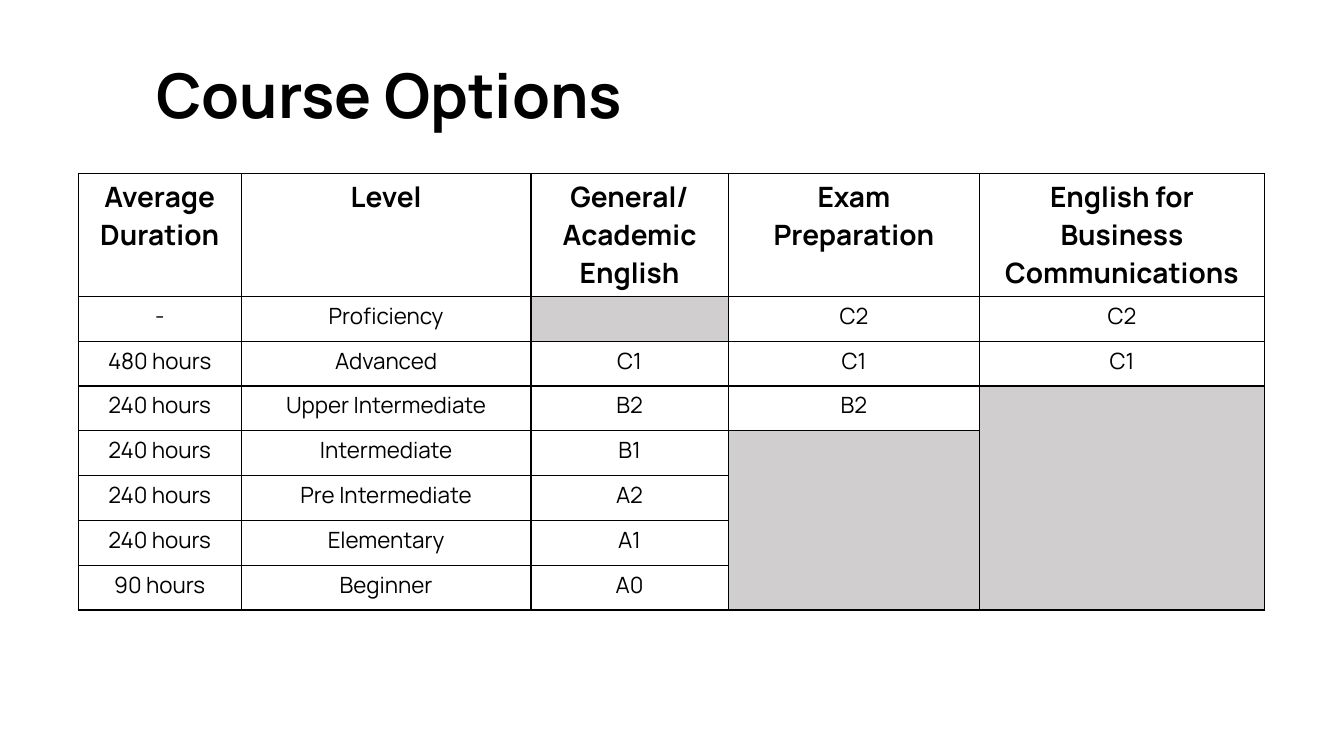
from dataclasses import dataclass

from lxml.etree import SubElement
from pptx import Presentation
from pptx.dml.color import RGBColor
from pptx.enum.text import MSO_ANCHOR as Anchor, MSO_AUTO_SIZE as AutoSize, PP_ALIGN as Align
from pptx.oxml.ns import qn
from pptx.util import Cm, Pt

FONT = "Manrope"
BLACK = "000000"
GREY = "D0CECE"
HEADER_HEIGHT, LEVEL_HEIGHT = 3.1, 1.13


@dataclass
class Course:
    heading: tuple[str, ...]
    width: float
    entries: tuple[str, ...]


@dataclass
class Unavailable:
    column: int
    first_row: int
    last_row: int


COURSES = [
    Course(("Average Duration",), 4.11,
           ("-", "480 hours", "240 hours", "240 hours", "240 hours", "240 hours", "90 hours")),
    Course(("Level",), 7.3,
           ("Proficiency", "Advanced", "Upper Intermediate", "Intermediate",
            "Pre Intermediate", "Elementary", "Beginner")),
    Course(("General/", "Academic English"), 4.97, ("", "C1", "B2", "B1", "A2", "A1", "A0")),
    Course(("Exam", "Preparation"), 6.34, ("C2", "C1", "B2")),
    Course(("English for Business Communications",), 7.17, ("C2", "C1")),
]
UNAVAILABLE = [Unavailable(2, 1, 1), Unavailable(3, 4, 7), Unavailable(4, 3, 7)]


def color(value: str) -> RGBColor:
    return RGBColor.from_string(value)


def add_run(paragraph, text: str, size: float, bold: bool) -> None:
    run = paragraph.add_run()
    run.text = text
    run.font.name = FONT
    run.font.size = Pt(size)
    run.font.bold = bold
    run.font.color.rgb = color(BLACK)


def write_cell(cell, lines: tuple[str, ...], size: float, bold: bool) -> None:
    frame = cell.text_frame
    for index, line in enumerate(lines):
        paragraph = frame.add_paragraph() if index else frame.paragraphs[0]
        paragraph.alignment = Align.CENTER
        add_run(paragraph, line, size, bold)


def style_cell(cell) -> None:
    cell.margin_left = cell.margin_right = Cm(0.2)
    cell.margin_top = cell.margin_bottom = Cm(0.1)
    properties = cell._tc.get_or_add_tcPr()
    for side in ("a:lnL", "a:lnR", "a:lnT", "a:lnB"):
        border = SubElement(properties, qn(side), w=str(Pt(1)))
        SubElement(SubElement(border, qn("a:solidFill")), qn("a:srgbClr"), val=BLACK)
    cell.fill.background()


def add_title(slide) -> None:
    title = slide.shapes.title
    title.left, title.top, title.width, title.height = Cm(3.68), Cm(1.3), Cm(16), Cm(4.01)
    frame = title.text_frame
    frame.word_wrap = True
    frame.auto_size = AutoSize.SHAPE_TO_FIT_TEXT
    frame.vertical_anchor = Anchor.TOP
    heading = frame.paragraphs[0]
    heading.alignment = Align.LEFT
    add_run(heading, "Course Options", 44, True)


def add_course_table(slide) -> None:
    level_count = len(COURSES[0].entries)
    options = slide.shapes.add_table(
        level_count + 1, len(COURSES), Cm(1.97), Cm(4.37),
        Cm(sum(course.width for course in COURSES)),
        Cm(HEADER_HEIGHT + level_count * LEVEL_HEIGHT)).table
    options.first_row = options.horz_banding = False

    # Row heights and plain bordered cells
    for index, row in enumerate(options.rows):
        row.height = Cm(LEVEL_HEIGHT if index else HEADER_HEIGHT)
    for cell in options.iter_cells():
        style_cell(cell)

    # Headings and entries, column by column
    for column, course in enumerate(COURSES):
        options.columns[column].width = Cm(course.width)
        write_cell(options.cell(0, column), course.heading, 20, True)
        for row, entry in enumerate(course.entries, start=1):
            if entry:
                write_cell(options.cell(row, column), (entry,), 16, False)

    # Grey areas where a course is not offered
    for area in UNAVAILABLE:
        top = options.cell(area.first_row, area.column)
        if area.last_row > area.first_row:
            top.merge(options.cell(area.last_row, area.column))
        top.fill.solid()
        top.fill.fore_color.rgb = color(GREY)


def main() -> None:
    deck = Presentation()
    deck.slide_width, deck.slide_height = Cm(33.87), Cm(19.05)
    slide = deck.slides.add_slide(deck.slide_layouts[5])
    add_title(slide)
    add_course_table(slide)
    deck.save("out.pptx")


if __name__ == "__main__":
    main()
